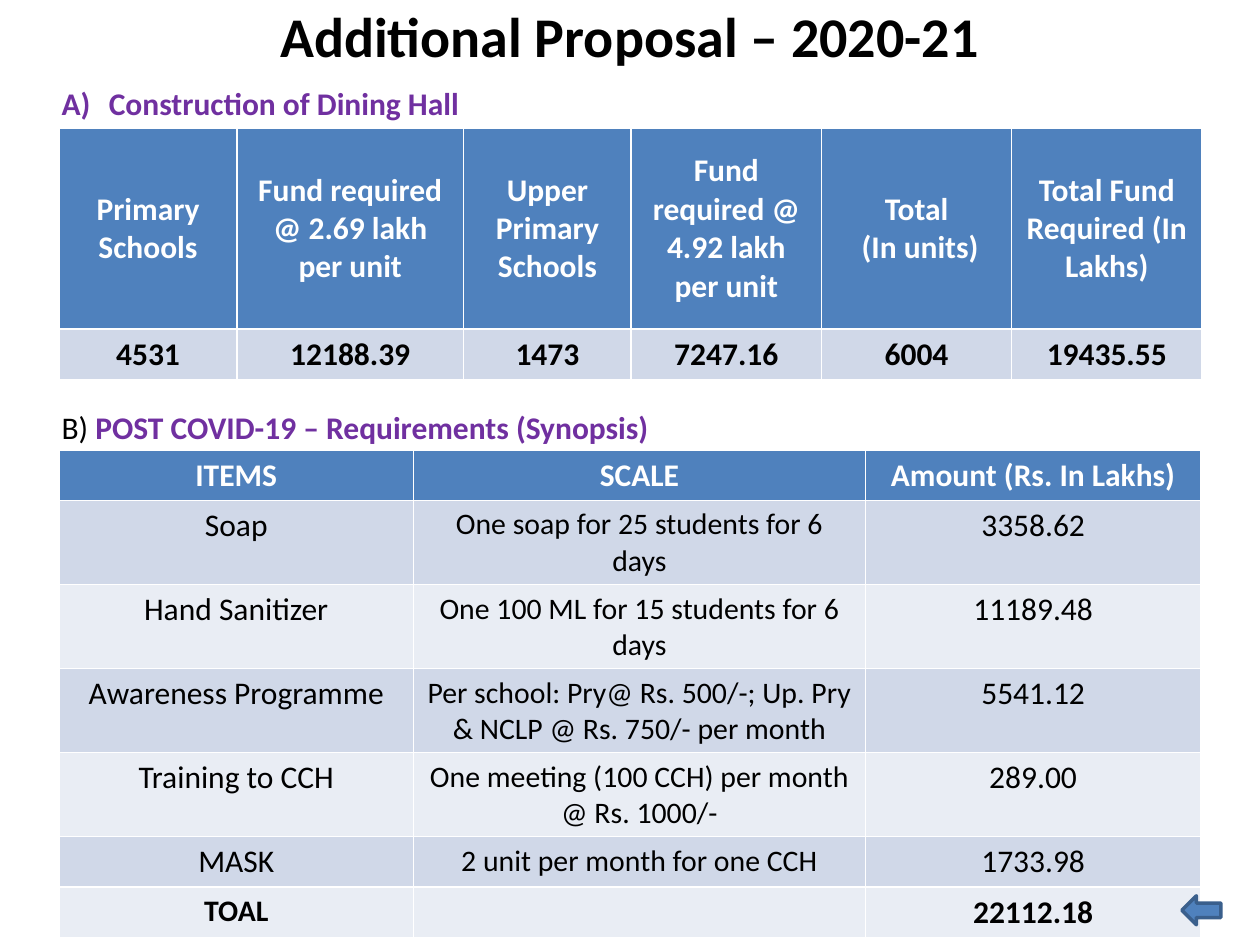
from lxml import etree
from pptx import Presentation
from pptx.dml.color import RGBColor
from pptx.enum.shapes import MSO_SHAPE
from pptx.enum.text import MSO_ANCHOR, PP_ALIGN
from pptx.oxml.ns import qn
from pptx.util import Inches, Pt

CENTER, LEFT = PP_ALIGN.CENTER, PP_ALIGN.LEFT
TOP, MIDDLE = MSO_ANCHOR.TOP, MSO_ANCHOR.MIDDLE
LEFT_ARROW = MSO_SHAPE.LEFT_ARROW

BLACK = RGBColor(0x00, 0x00, 0x00)
WHITE = RGBColor(0xFF, 0xFF, 0xFF)
PURPLE = RGBColor(0x70, 0x30, 0xA0)
BLUE = RGBColor(0x4F, 0x81, 0xBD)
DARK_BLUE = RGBColor(0x3A, 0x5F, 0x8C)
BANDS = [RGBColor(0xE9, 0xED, 0xF4), RGBColor(0xD0, 0xD8, 0xE8)]

deck = Presentation()
deck.slide_width, deck.slide_height = Inches(10), Inches(7.5)
COL = deck.slide_width // 100
ROW = deck.slide_height // 75
page = deck.slides.add_slide(deck.slide_layouts[6])


def style_frame(frame, size, color, bold, align=CENTER):
    for para in frame.paragraphs:
        para.alignment = align
        for span in para.runs:
            span.font.name = "Calibri"
            span.font.size = Pt(size)
            span.font.bold = bold
            span.font.color.rgb = color


def add_text(text, left, top, width, height):
    box = page.shapes.add_textbox(
        int(left * COL), int(top * ROW), int(width * COL), int(height * ROW))
    box.text_frame.word_wrap = True
    box.text_frame.text = text
    return box.text_frame


title = add_text("Additional Proposal – 2020-21", 0, 0, 100, 5.5)
title.vertical_anchor = MIDDLE
style_frame(title, 32, BLACK, True)

hall_heading = add_text("Construction of Dining Hall", 3.9, 6.2, 39.1, 4)
style_frame(hall_heading, 18, PURPLE, True, LEFT)
synopsis_heading = add_text("B) ", 3.9, 31.9, 58.6, 4)
synopsis_heading.paragraphs[0].add_run().text = "POST COVID-19 – Requirements (Synopsis)"
style_frame(synopsis_heading, 18, PURPLE, True, LEFT)
marker = synopsis_heading.paragraphs[0].runs[0].font
marker.bold = False
marker.color.rgb = BLACK

for heading in (hall_heading, synopsis_heading):
    properties = heading.paragraphs[0]._p.get_or_add_pPr()
    properties.set("marL", str(int(3.75 * COL)))
    properties.set("indent", str(int(-3.75 * COL)))
numbering = etree.SubElement(
    hall_heading.paragraphs[0]._p.get_or_add_pPr(), qn("a:buAutoNum"))
numbering.set("type", "alphaUcParenR")

hall_rows = [
    ["Primary Schools", "Fund required @ 2.69 lakh per unit", "Upper Primary Schools",
     "Fund required @ 4.92 lakh per unit", "Total\n (In units)",
     "Total Fund Required (In Lakhs)"],
    ["4531", "12188.39", "1473", "7247.16", "6004", "19435.55"],
]
covid_rows = [
    ["ITEMS", "SCALE", "Amount (Rs. In Lakhs)"],
    ["Soap", "One soap for 25 students for 6 days", "3358.62"],
    ["Hand Sanitizer", "One 100 ML for 15 students for 6 days", "11189.48"],
    ["Awareness Programme",
     "Per school: Pry@ Rs. 500/-; Up. Pry & NCLP @ Rs. 750/- per month", "5541.12"],
    ["Training to CCH", "One meeting (100 CCH) per month @ Rs. 1000/-", "289.00"],
    ["MASK", "2 unit per month for one CCH", "1733.98"],
    ["TOAL", "", "22112.18"],
]
tables = [
    (hall_rows, 10.2, [14.1, 18, 13.3, 15.1, 15.1, 15.1], [15.9, 4], MIDDLE),
    (covid_rows, 35.7, [28.1, 35.9, 26.6], [4] + [6.67] * 4 + [4] * 2, TOP),
]
for rows, top, widths, heights, anchor in tables:
    table = page.shapes.add_table(
        len(rows), len(widths), int(4.7 * COL), int(top * ROW),
        int(sum(widths) * COL), int(sum(heights) * ROW)).table
    for column, width in zip(table.columns, widths):
        column.width = int(width * COL)
    for r, (texts, height) in enumerate(zip(rows, heights)):
        table.rows[r].height = int(height * ROW)
        for c, text in enumerate(texts):
            cell = table.cell(r, c)
            cell.fill.solid()
            cell.fill.fore_color.rgb = BANDS[r % 2] if r else BLUE
            cell.vertical_anchor = anchor
            cell.text_frame.text = text
            small = rows is covid_rows and r and (c == 1 or text == "TOAL")
            bold = rows is hall_rows or r in (0, len(rows) - 1)
            style_frame(cell.text_frame, 17 if small else 18, BLACK if r else WHITE, bold)

arrow = page.shapes.add_shape(
    LEFT_ARROW, int(93.8 * COL), int(71.1 * ROW), int(3.1 * COL), int(2.3 * ROW))
arrow.shadow.inherit = False
arrow.fill.solid()
arrow.fill.fore_color.rgb = BLUE
arrow.line.color.rgb = DARK_BLUE
arrow.line.width = Pt(2)

deck.save("out.pptx")
